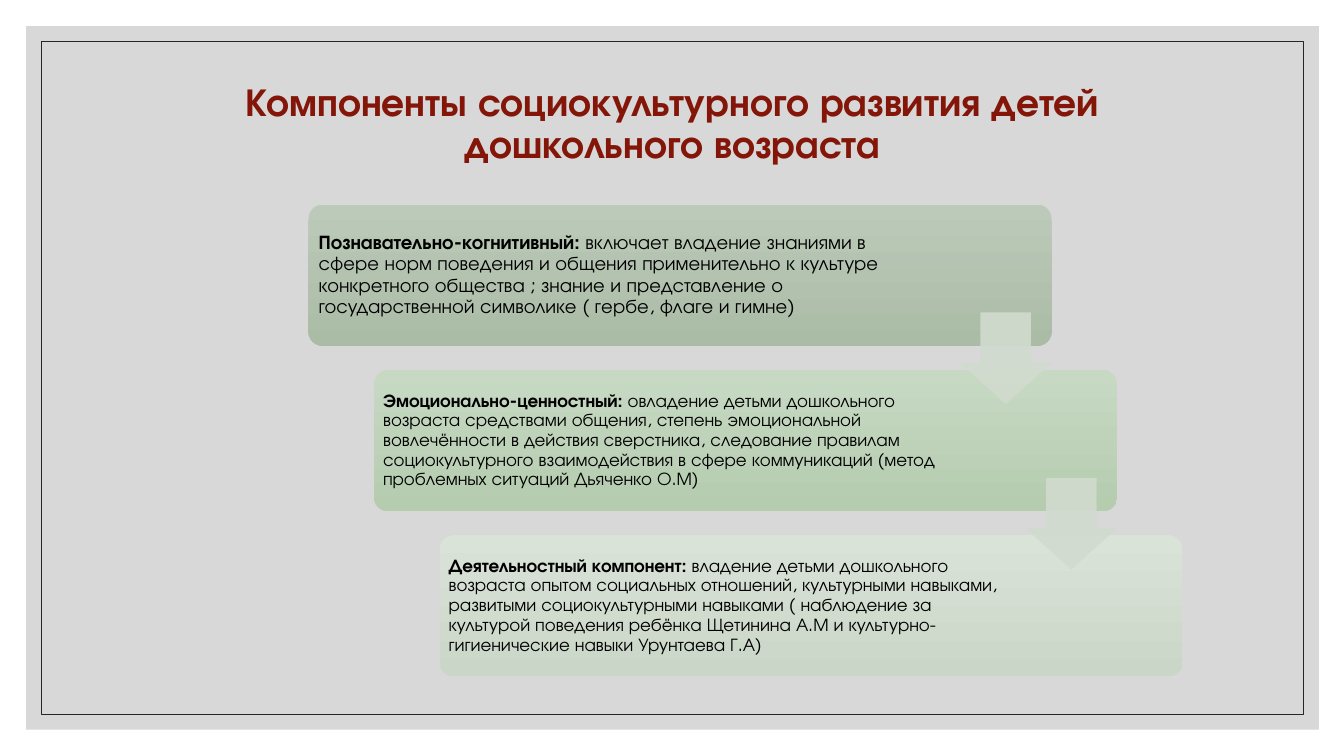
"""Build a slide with the three components of preschool sociocultural development."""
import pptx
import pptx.dml.color
import pptx.enum.shapes
import pptx.enum.text
import pptx.oxml
import pptx.oxml.ns
import pptx.util

Inches = pptx.util.Inches
RGB = pptx.dml.color.RGBColor.from_string
MSO = pptx.enum.shapes.MSO_SHAPE
ALIGN = pptx.enum.text.PP_ALIGN
MIDDLE = pptx.enum.text.MSO_ANCHOR.MIDDLE

THEME = {
    "font": "TeX Gyre Adventor",
    "title": {"size": 28, "color": "841609"},
    "text": "000000",
    "panel": "BFBFBF",
    "frame": "262626",
    "arrow": "D1DBCF",
}
CARDS = [
    {"head": "Познавательно-когнитивный: ",
     "body": "включает владение знаниями в сфере норм поведения и общения применительно "
             "к культуре конкретного общества ; знание и представление о государственной "
             "символике ( гербе, флаге и гимне)",
     "size": 14, "inset": 0.06, "right": 1.49, "gradient": ("BCCAB9", "AABBA6")},
    {"head": "Эмоционально-ценностный: ",
     "body": "овладение детьми дошкольного возраста средствами общения, степень "
             "эмоциональной вовлечённости в действия сверстника, следование правилам "
             "социокультурного взаимодействия в сфере коммуникаций (метод проблемных "
             "ситуаций Дьяченко О.М)",
     "size": 13, "inset": 0.05, "right": 1.61, "gradient": ("C7D9C3", "B5CCAF")},
    {"head": "Деятельностный компонент: ",
     "body": "владение детьми дошкольного возраста опытом социальных отношений, "
             "культурными навыками, развитыми социокультурными навыками ( наблюдение за "
             "культурой поведения ребёнка Щетинина А.М и культурно-гигиенические навыки "
             "Урунтаева Г.А)",
     "size": 13, "inset": 0.05, "right": 1.61, "gradient": ("DAE3D8", "CAD6C7")},
]
CARD_X, CARD_Y, CARD_W, CARD_H = 3.06, 2.03, 7.37, 1.4
STEP_X, STEP_Y = 0.65, 1.64
ARROW_X, ARROW_Y, ARROW_SIZE = 9.52, 3.1, 0.91


def add_box(s, kind, x, y, w, h, color=None, alpha=100):
    """Add a preset shape without shadow or line, optionally with a translucent fill."""
    sp = s.shapes.add_shape(kind, Inches(x), Inches(y), Inches(w), Inches(h))
    sp.shadow.inherit = False
    sp.line.fill.background()
    if color is None:
        sp.fill.background()
    else:
        sp.fill.solid()
        sp.fill.fore_color.rgb = RGB(color)
        clr = sp.element.spPr.find(".//" + pptx.oxml.ns.qn("a:srgbClr"))
        clr.append(pptx.oxml.parse_xml(
            f'<a:alpha {pptx.oxml.ns.nsdecls("a")} val="{alpha * 1000}"/>'))
    return sp


def add_run(p, text, size, color, bold):
    """Append a run in the theme font."""
    r = p.add_run()
    r.text = text
    r.font.color.rgb = RGB(color)
    for name, value in {"name": THEME["font"], "size": pptx.util.Pt(size), "bold": bold}.items():
        setattr(r.font, name, value)


prs = pptx.Presentation()
prs.slide_width, prs.slide_height = Inches(13.33), Inches(7.5)
s = prs.slides.add_slide(prs.slide_layouts[5])
title = s.shapes.title

panel = add_box(s, MSO.RECTANGLE, 0.26, 0.26, 12.82, 6.98, THEME["panel"], 60)
frame = add_box(s, MSO.RECTANGLE, 0.41, 0.41, 12.52, 6.68)
frame.line.color.rgb = RGB(THEME["frame"])
frame.line.width = pptx.util.Pt(0.5)
for sp in (panel, frame):
    title.element.addprevious(sp.element)

for name, value in {"left": 1.17, "top": 0.7, "width": 11, "height": 1.5}.items():
    setattr(title, name, Inches(value))
tf = title.text_frame
for name, value in {"word_wrap": True, "vertical_anchor": MIDDLE,
                    "auto_size": pptx.enum.text.MSO_AUTO_SIZE.NONE,
                    "margin_left": Inches(0.3), "margin_right": Inches(0.3),
                    "margin_bottom": Inches(0.47)}.items():
    setattr(tf, name, value)
p = tf.paragraphs[0]
p.alignment, p.line_spacing = ALIGN.CENTER, 0.9
add_run(p, "Компоненты социокультурного развития детей дошкольного возраста",
        bold=True, **THEME["title"])

for i, card in enumerate(CARDS):
    sp = add_box(s, MSO.ROUNDED_RECTANGLE, CARD_X + i * STEP_X, CARD_Y + i * STEP_Y, CARD_W, CARD_H)
    sp.adjustments[0] = 0.1
    sp.fill.gradient()
    sp.fill.gradient_angle = 270
    for stop, color in zip(sp.fill.gradient_stops, card["gradient"]):
        stop.color.rgb = RGB(color)
    tf = sp.text_frame
    inset = Inches(card["inset"])
    for name, value in {"word_wrap": True, "vertical_anchor": MIDDLE, "margin_left": inset,
                        "margin_top": inset, "margin_bottom": inset,
                        "margin_right": Inches(card["right"])}.items():
        setattr(tf, name, value)
    p = tf.paragraphs[0]
    p.alignment, p.line_spacing = ALIGN.LEFT, 0.9
    add_run(p, card["head"], card["size"], THEME["text"], True)
    add_run(p, card["body"], card["size"], THEME["text"], False)

for i in range(len(CARDS) - 1):
    sp = add_box(s, MSO.DOWN_ARROW, ARROW_X + i * STEP_X, ARROW_Y + i * STEP_Y,
                 ARROW_SIZE, ARROW_SIZE, THEME["arrow"], 90)
    sp.adjustments[0], sp.adjustments[1] = 0.55, 0.45

prs.save("out.pptx")
